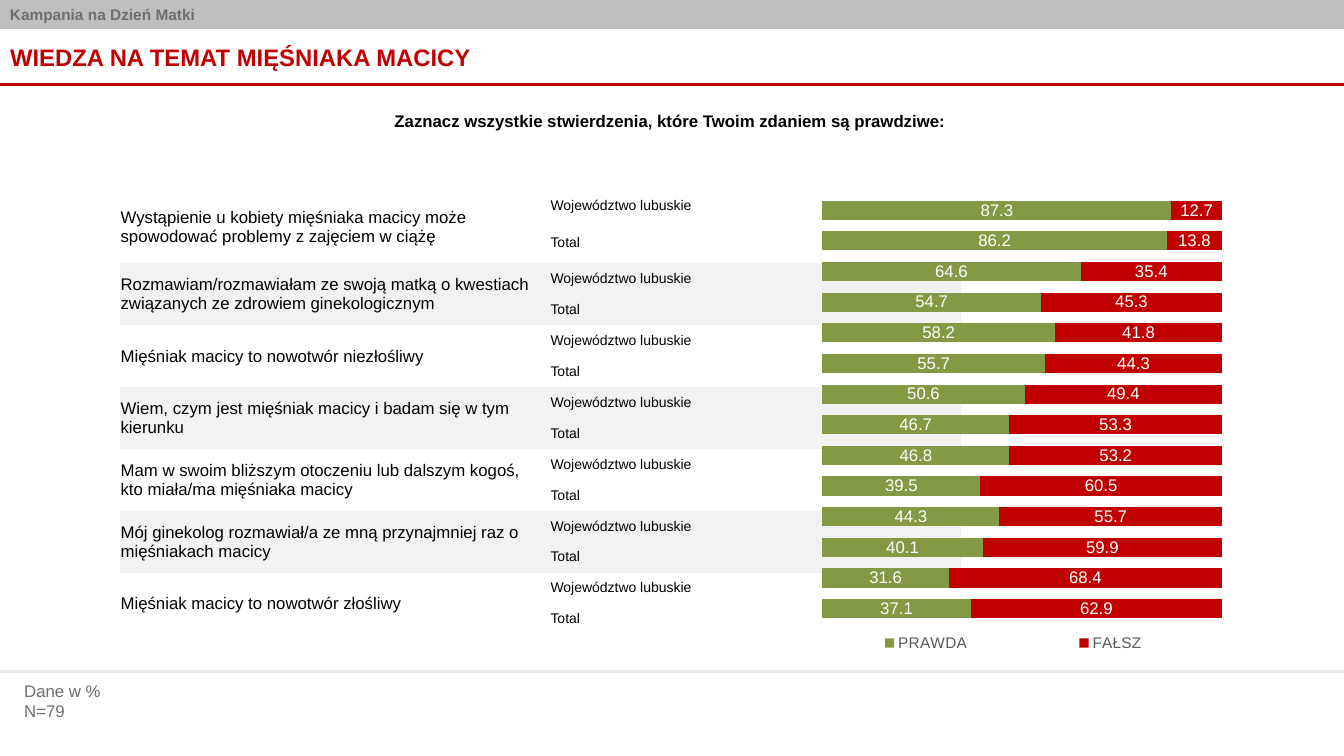
from dataclasses import dataclass

import pptx
import pptx.chart.data
import pptx.dml.color
import pptx.enum.chart
import pptx.enum.shapes
import pptx.enum.text
import pptx.oxml
import pptx.oxml.ns
import pptx.util

Cm, Pt = pptx.util.Cm, pptx.util.Pt
RGB = pptx.dml.color.RGBColor.from_string
qn, nsdecls = pptx.oxml.ns.qn, pptx.oxml.ns.nsdecls
Align, Anchor = pptx.enum.text.PP_ALIGN, pptx.enum.text.MSO_ANCHOR


@dataclass(frozen=True)
class Theme:
    font: str = "Arial"
    red: str = "C00000"
    green: str = "839943"
    black: str = "000000"
    white: str = "FFFFFF"
    header: str = "808080"
    grey_text: str = "6D6E70"
    legend_text: str = "595959"
    band: str = "F2F2F2"
    footer_line: str = "E8E8E8"
    title_size: int = 17
    body_size: int = 12
    small_size: int = 11
    group_size: int = 10


THEME = Theme()
WIDTH, HEIGHT = Cm(33.87), Cm(19.05)
NO_TABLE_STYLE = "{2D5ABB26-0587-4C30-8999-92F81FD0307C}"
GROUPS = ("Województwo lubuskie", "Total")
# Statement, then the share of PRAWDA for each of GROUPS
STATEMENTS = [
    ("Wystąpienie u kobiety mięśniaka macicy może spowodować problemy z zajęciem w ciążę", 87.3, 86.2),
    ("Rozmawiam/rozmawiałam ze swoją matką o kwestiach związanych ze zdrowiem ginekologicznym", 64.6, 54.7),
    ("Mięśniak macicy to nowotwór niezłośliwy", 58.2, 55.7),
    ("Wiem, czym jest mięśniak macicy i badam się w tym kierunku", 50.6, 46.7),
    ("Mam w swoim bliższym otoczeniu lub dalszym kogoś, kto miała/ma mięśniaka macicy", 46.8, 39.5),
    ("Mój ginekolog rozmawiał/a ze mną przynajmniej raz o mięśniakach macicy", 44.3, 40.1),
    ("Mięśniak macicy to nowotwór złośliwy", 31.6, 37.1),
]


def set_font(font, size, color, bold=False):
    font.name, font.size, font.bold = THEME.font, Pt(size), bold
    font.color.rgb = RGB(color)


def write(tf, lines, size, color, bold=False, align=Align.LEFT, anchor=Anchor.TOP):
    tf.word_wrap = True
    tf.vertical_anchor = anchor
    tf.text = "\n".join(lines)
    for p in tf.paragraphs:
        p.alignment = align
        set_font(p.font, size, color, bold)


def add_text(s, box, lines, **style):
    sp = s.shapes.add_textbox(*box)
    write(sp.text_frame, lines, THEME.body_size, **style)


def add_header(s, text):
    sp = s.shapes.add_shape(pptx.enum.shapes.MSO_SHAPE.RECTANGLE, 0, 0, WIDTH, Cm(0.73))
    sp.shadow.inherit = False
    sp.line.fill.background()
    sp.fill.solid()
    sp.fill.fore_color.rgb = RGB(THEME.header)
    color = sp.fill._xPr.find(".//" + qn("a:srgbClr"))
    color.append(pptx.oxml.parse_xml(f'<a:alpha {nsdecls("a")} val="50000"/>'))
    write(sp.text_frame, [text], THEME.small_size, THEME.grey_text, bold=True, anchor=Anchor.MIDDLE)


def add_rule(s, y, color):
    line = s.shapes.add_connector(pptx.enum.shapes.MSO_CONNECTOR.STRAIGHT, 0, y, WIDTH, y)
    line.line.width = Pt(2)
    line.line.color.rgb = RGB(color)
    line._element.spPr.append(pptx.oxml.parse_xml(f'<a:effectLst {nsdecls("a")}/>'))


def set_title(s, text):
    title = s.shapes.title
    title.left, title.top, title.width, title.height = 0, Cm(0.73), WIDTH, Cm(1.4)
    write(title.text_frame, [text], THEME.title_size, THEME.red, bold=True, anchor=Anchor.MIDDLE)


def fill_cell(cell, text, size):
    if text:
        write(cell.text_frame, [text], size, THEME.black)
        cell.vertical_anchor = Anchor.MIDDLE


def add_statement_table(s):
    count = len(STATEMENTS) * len(GROUPS)
    frame = s.shapes.add_table(count, 2, Cm(3.02), Cm(4.8), Cm(21.2), Cm(11))
    table = frame.table
    table.first_row = table.horz_banding = False
    table._tbl.tblPr.find(qn("a:tableStyleId")).text = NO_TABLE_STYLE
    for column in table.columns:
        column.width = Cm(10.6)
    for i, row in enumerate(table.rows):
        row.height = Cm(1.05 if i == 1 else 0.78)
        statement, group = divmod(i, len(GROUPS))
        left, right = row.cells
        left.margin_left = left.margin_right = left.margin_top = Cm(0.02)
        left.margin_bottom = 0
        fill_cell(left, "" if group else STATEMENTS[statement][0], THEME.body_size)
        fill_cell(right, GROUPS[group], THEME.group_size)
        for cell in (left, right):
            if statement % 2:
                cell.fill.solid()
                cell.fill.fore_color.rgb = RGB(THEME.band)
            else:
                cell.fill.background()
    for i in range(0, count, len(GROUPS)):
        table.cell(i, 0).merge(table.cell(i + len(GROUPS) - 1, 0))


def place_part(part, index, x, y, w, h, inner=False):
    """Fix a chart part at fractions of the chart's size."""
    for old in part.findall(qn("c:layout")):
        part.remove(old)
    target = '<c:layoutTarget val="inner"/>' if inner else ""
    modes = "".join(f'<c:{a}Mode val="edge"/>' for a in "xy")
    sizes = "".join(f'<c:{a} val="{v}"/>' for a, v in zip("xywh", (x, y, w, h)))
    part.insert(index, pptx.oxml.parse_xml(
        f'<c:layout {nsdecls("c")}><c:manualLayout>{target}{modes}{sizes}</c:manualLayout></c:layout>'))


def add_answer_chart(s):
    shares = [share for _, *pair in STATEMENTS for share in pair]
    data = pptx.chart.data.CategoryChartData(number_format="0.0")
    data.categories = [str(i + 1) for i in range(len(shares))]
    data.add_series("PRAWDA", shares)
    data.add_series("FAŁSZ", [round(100 - share, 1) for share in shares])
    chart = s.shapes.add_chart(pptx.enum.chart.XL_CHART_TYPE.BAR_STACKED_100,
                               Cm(9.09), Cm(3.27), Cm(22.38), Cm(13.69), data).chart
    set_font(chart.font, THEME.body_size, THEME.black)
    chart.has_title = False
    chart.category_axis.reverse_order = True
    for axis in (chart.category_axis, chart.value_axis):
        axis.has_major_gridlines = False
        axis.visible = False

    plot = chart.plots[0]
    plot.vary_by_categories = False
    plot.gap_width, plot.overlap = 60, 100
    for series, color in zip(plot.series, (THEME.green, THEME.red)):
        series.format.fill.solid()
        series.format.fill.fore_color.rgb = RGB(color)
        labels = series.data_labels
        labels.show_value = True
        labels.number_format, labels.number_format_is_linked = "0.0", False
        labels.position = pptx.enum.chart.XL_LABEL_POSITION.CENTER
        set_font(labels.font, THEME.body_size, THEME.white)

    chart.has_legend = True
    legend = chart.legend
    legend.position = pptx.enum.chart.XL_LEGEND_POSITION.BOTTOM
    legend.include_in_layout = False
    set_font(legend.font, THEME.small_size, THEME.legend_text)
    place_part(legend._element, 1, 0.47, 0.91, 0.53, 0.07)
    place_part(chart._chartSpace.chart.plotArea, 0, 0.52, 0.12, 0.45, 0.79, inner=True)


def main():
    prs = pptx.Presentation()
    prs.slide_width, prs.slide_height = WIDTH, HEIGHT
    s = prs.slides.add_slide(prs.slide_layouts[5])
    add_header(s, "Kampania na Dzień Matki")
    add_rule(s, Cm(16.92), THEME.footer_line)
    add_rule(s, Cm(2.13), THEME.red)
    add_statement_table(s)
    set_title(s, "WIEDZA NA TEMAT MIĘŚNIAKA MACICY")
    add_text(s, (Cm(4.85), Cm(2.67), Cm(24.08), Cm(0.76)),
             ["Zaznacz wszystkie stwierdzenia, które Twoim zdaniem są prawdziwe:"],
             color=THEME.black, bold=True, align=Align.CENTER)
    add_answer_chart(s)
    add_text(s, (Cm(0.36), Cm(17.02), Cm(24.54), Cm(1.27)), ["Dane w %", "N=79"], color=THEME.grey_text)
    prs.save("out.pptx")


if __name__ == "__main__":
    main()
